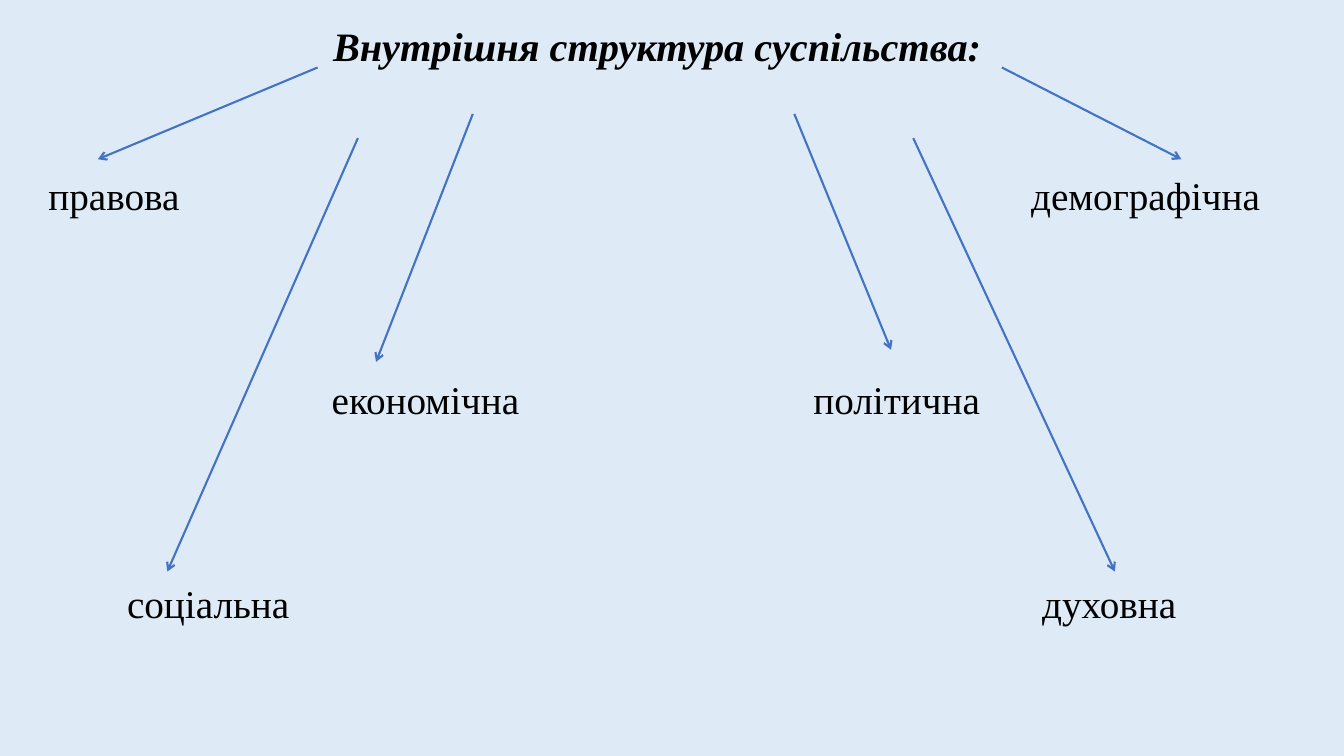
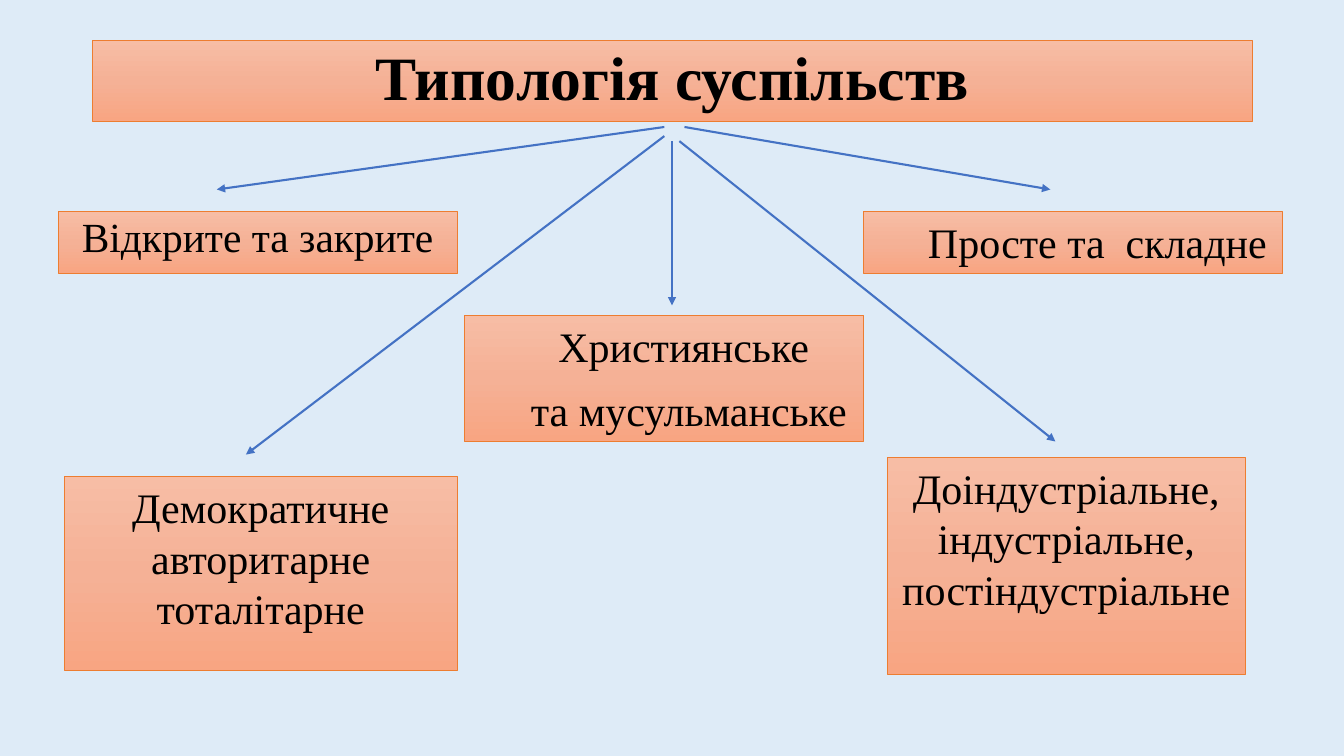
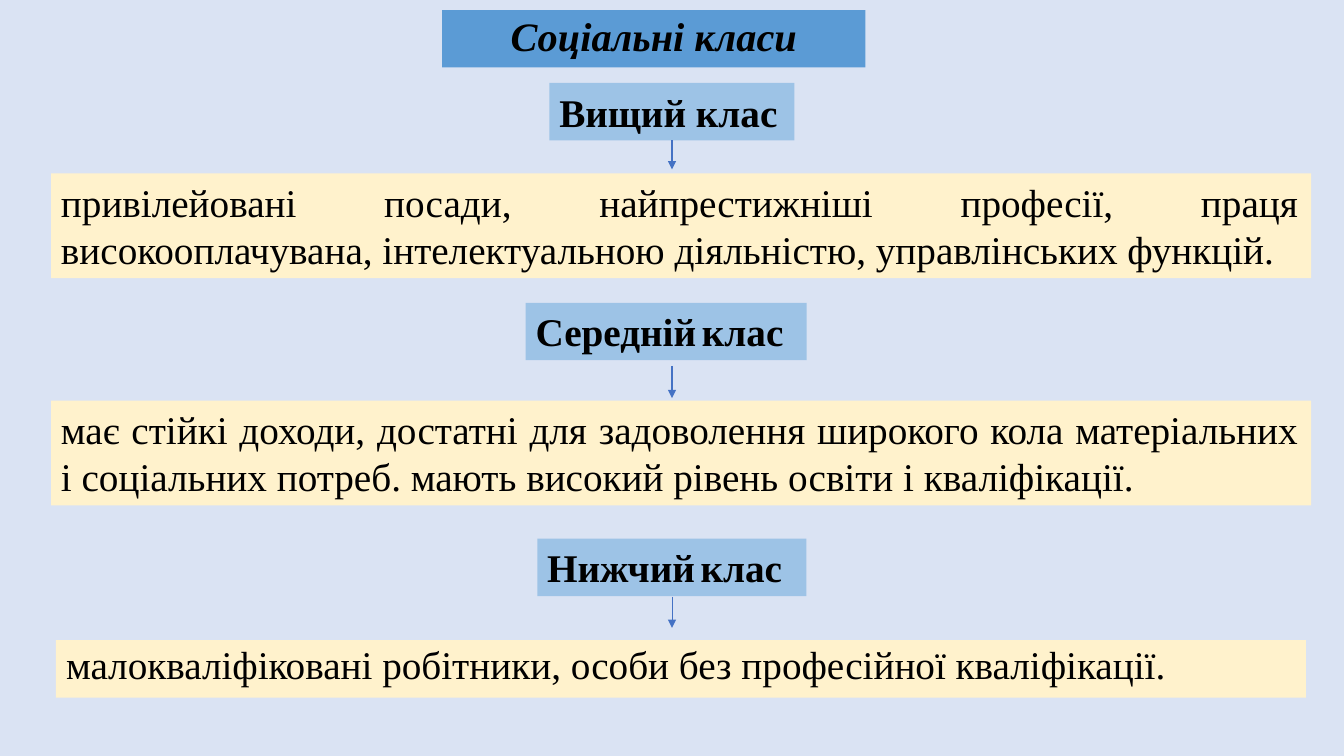
"""Three slides on society: its inner structure, its types and its social classes."""
from copy import deepcopy

from pptx import Presentation
from pptx import util as u
from pptx.dml.color import RGBColor
from pptx.enum import shapes, text
from pptx.oxml import ns
from pptx.oxml.xmlchemy import OxmlElement

COLORS = {
    "sky": "DEEBF7", "lavender": "DAE3F3", "ink": "000000", "arrow": "4472C4",
    "peach": "F7BDA5", "apricot": "F5B196", "salmon": "F8A582", "orange": "ED7D31",
    "blue": "5B9BD5", "light blue": "9DC3E6", "cream": "FFF2CC",
}
RGB = {name: RGBColor.from_string(code) for name, code in COLORS.items()}
FONT = "Times New Roman"
ALIGN = text.PP_ALIGN
TOP, MIDDLE = text.MSO_ANCHOR.TOP, text.MSO_ANCHOR.MIDDLE
RECT = shapes.MSO_SHAPE.RECTANGLE

prs = Presentation()
prs.slide_width, prs.slide_height = u.Inches(13.33), u.Inches(7.5)
COL, ROW = prs.slide_width / 100, prs.slide_height / 100

master = prs.slide_master
master.background.fill.solid()
master.background.fill.fore_color.rgb = RGB["sky"]
list_style = master.element.find(f".//{ns.qn('p:bodyStyle')}/{ns.qn('a:lvl1pPr')}")
list_style.set("marL", "0")
list_style.set("indent", "0")
bullet = list_style.find(ns.qn("a:buChar"))
list_style.replace(bullet, OxmlElement("a:buNone"))


def panel(shape, box, lines, size, fill=None, align=ALIGN.CENTER, anchor=TOP,
          bold=False, italic=False, line=1.0, before=0, after=0, indent=0):
    """Place a shape by percent of the slide, then fill it and set its text."""
    left, top, width, height = box
    shape.left, shape.top = round(left * COL), round(top * ROW)
    shape.width, shape.height = round(width * COL), round(height * ROW)
    shape.shadow.inherit = False
    if fill == "peach":
        shape.fill.gradient()
        shape.fill.gradient_angle = 270
        stops = shape._element.spPr.find(f".//{ns.qn('a:gsLst')}")
        middle = deepcopy(stops[0])
        middle.set("pos", "50000")
        stops.insert(1, middle)
        for stop, name in zip(shape.fill.gradient_stops, ("peach", "apricot", "salmon")):
            stop.color.rgb = RGB[name]
        shape.line.color.rgb = RGB["orange"]
        shape.line.width = u.Pt(0.5)
    else:
        shape.line.fill.background()
        if fill:
            shape.fill.solid()
            shape.fill.fore_color.rgb = RGB[fill]
    frame = shape.text_frame
    frame.text = lines
    frame.word_wrap = True
    frame.auto_size = text.MSO_AUTO_SIZE.NONE
    frame.vertical_anchor = anchor
    for paragraph in frame.paragraphs:
        paragraph.alignment = align
        paragraph.line_spacing = line
        paragraph.space_before, paragraph.space_after = u.Pt(before), u.Pt(after)
        if indent:
            paragraph._p.get_or_add_pPr().set("indent", str(u.Inches(indent)))
        for run in paragraph.runs:
            run.font.name, run.font.size = FONT, u.Pt(size)
            run.font.bold, run.font.italic = bold, italic
            run.font.color.rgb = RGB["ink"]


def arrow(slide, x1, y1, x2, y2, head="triangle", weight=1.5):
    """Draw an arrow between two points given in percent of the slide."""
    link = slide.shapes.add_connector(
        shapes.MSO_CONNECTOR.STRAIGHT,
        round(x1 * COL), round(y1 * ROW), round(x2 * COL), round(y2 * ROW))
    link.line.color.rgb = RGB["arrow"]
    link.line.width = u.Pt(weight)
    tail = OxmlElement("a:tailEnd")
    tail.set("type", head)
    link.line._get_or_add_ln().append(tail)
    link._element.spPr.append(OxmlElement("a:effectLst"))


structure, typology, classes = [
    prs.slides.add_slide(prs.slide_layouts[1]) for _ in range(3)]

panel(structure.shapes.title, (2.85, 2.85, 92.1, 11.73),
      "Внутрішня структура суспільства:", 28.8, bold=True, italic=True, line=0.9)
for spheres, left, width, lines, margins in [
    (structure.placeholders[1], 2.85, 50, "правова\nекономічна\nсоціальна",
     (0, 2.81, 0.78)),
    (structure.shapes.add_textbox(0, 0, 0, 0), 59.78, 37.4,
     "демографічна\nполітична\nдуховна", (2.16, 0, 2.27)),
]:
    panel(spheres, (left, 21.07, width, 75.47), lines, 28,
          align=ALIGN.LEFT, line=1.15, before=107)
    for paragraph, margin in zip(spheres.text_frame.paragraphs, margins):
        paragraph._p.get_or_add_pPr().set("marL", str(u.Inches(margin)))
    spheres.text_frame.paragraphs[0].space_before = u.Pt(10)
for ends in [
    (23.63, 8.93, 7.28, 21.07), (35.18, 15.07, 27.98, 47.87),
    (59.1, 15.07, 66.3, 46.27), (74.55, 8.93, 87.9, 21.07),
    (26.63, 18.27, 12.45, 75.6), (67.95, 18.27, 82.95, 75.6),
]:
    arrow(structure, *ends, head="arrow")

panel(typology.shapes.title, (6.9, 5.33, 86.25, 10.75), "Типологія суспільств", 44,
      "peach", anchor=MIDDLE, bold=True, line=0.9)
panel(typology.placeholders[1], (4.35, 28, 29.7, 8.13), "Відкрите та закрите", 29.6,
      "peach", line=0.9, before=10)
for box, lines, after, indent in [
    ((66, 60.53, 26.7, 28.67),
     "Доіндустріальне, індустріальне, постіндустріальне", 0, 0),
    ((4.8, 63.07, 29.22, 25.6), "Демократичне\nавторитарне\nтоталітарне", 0, 0),
    ((34.58, 41.7, 29.7, 16.67), "Християнське \nта мусульманське", 10, 0.49),
    ((64.25, 28, 31.16, 8.13), "Просте та  складне", 10, 0.49),
]:
    panel(typology.shapes.add_shape(RECT, 0, 0, 0, 0), box, lines, 30, "peach",
          after=after, indent=indent)
for ends in [
    (49.43, 16.8, 16.13, 25.07), (50, 18.67, 50, 40.4), (50.93, 16.8, 78.15, 25.07),
    (49.43, 18, 18.3, 60.13), (50.55, 18.67, 78.53, 58.4),
]:
    arrow(typology, *ends)

classes.background.fill.solid()
classes.background.fill.fore_color.rgb = RGB["lavender"]
BAND = 7.6
panel(classes.shapes.title, (32.9, 1.33, 31.5, BAND), "Соціальні класи", 28.8,
      "blue", anchor=MIDDLE, bold=True, italic=True, line=0.9)
panel(classes.placeholders[1], (4.16, 84.67, 93, BAND),
      "малокваліфіковані робітники, особи без професійної кваліфікації.", 28,
      "cream", align=ALIGN.LEFT, line=0.9, before=10)
for left, top, width, first, rest, start, end, weight in [
    (40.88, 10.98, 18.23, "Вищий клас", (), 18.53, 22.4, 1),
    (39.12, 40.05, 20.9, "Середній", (" ", "клас"), 48.4, 52.67, 1.5),
    (39.98, 71.25, 20.03, "Нижчий", (" ", "клас"), 78.93, 83.07, 0.5),
]:
    label = classes.shapes.add_shape(RECT, 0, 0, 0, 0)
    panel(label, (left, top, width, BAND), first, 28, "light blue",
          align=ALIGN.LEFT, bold=True)
    for word in rest:
        run = label.text_frame.paragraphs[0].add_run()
        run.text = word
        run.font.name, run.font.size = (
            ("Calibri", u.Pt(18)) if word == " " else (FONT, u.Pt(28)))
        run.font.bold = True
        run.font.color.rgb = RGB["ink"]
    arrow(classes, 50, start, 50, end, weight=weight)
for top, traits in [
    (22.93, "привілейовані посади, найпрестижніші професії, праця високооплачувана, "
            "інтелектуальною діяльністю, управлінських функцій."),
    (53, "має стійкі доходи, достатні для задоволення широкого кола матеріальних "
         "і соціальних потреб. мають високий рівень освіти і кваліфікації."),
]:
    traits_band = classes.shapes.add_shape(RECT, 0, 0, 0, 0)
    panel(traits_band, (3.8, top, 93.75, 13.87), traits, 28, "cream",
          align=ALIGN.JUSTIFY, before=5.6)
    traits_band.text_frame.margin_right = u.Inches(0.13)

prs.save("out.pptx")
